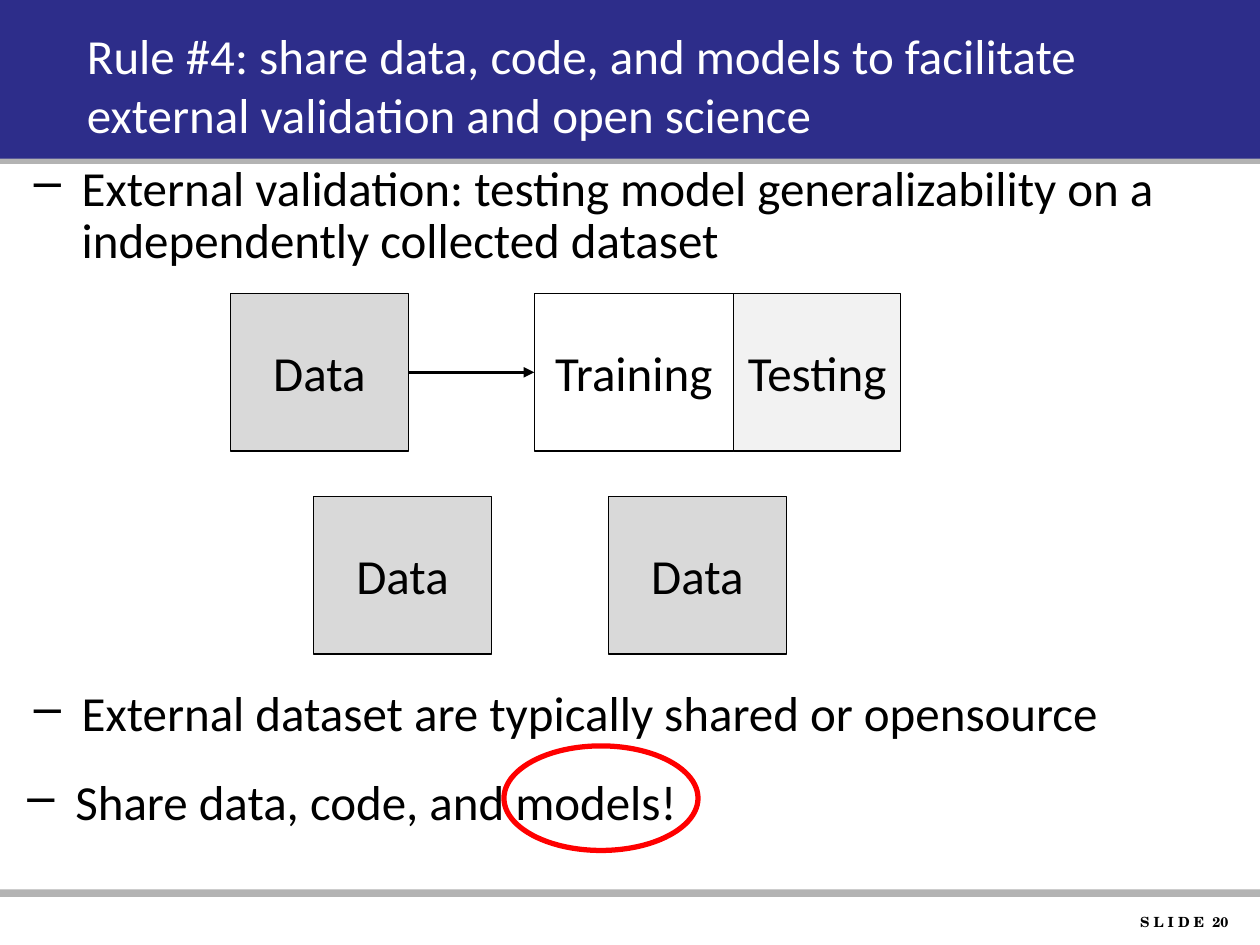
from lxml.etree import SubElement
from pptx import Presentation
from pptx.dml.color import RGBColor
from pptx.enum.shapes import MSO_CONNECTOR as Connector, MSO_SHAPE as Shape
from pptx.enum.text import MSO_ANCHOR as Anchor, PP_ALIGN as Align
from pptx.oxml.ns import qn
from pptx.util import Inches, Pt

COLORS = {
    "navy": "2D2D8A",
    "rule": "B3B3B3",
    "data": "D9D9D9",
    "testing": "F2F2F2",
    "white": "FFFFFF",
    "black": "000000",
    "highlight": "FF0000",
}
BOX_HEIGHT = 1.25
DATA_WIDTH = 1.41


def color(name):
    return RGBColor.from_string(COLORS[name])


def set_font(paragraph, size=28, name="Calibri", ink="black", bold=False):
    font = paragraph.font
    font.size, font.name, font.bold = Pt(size), name, bold
    font.color.rgb = color(ink)


def add_shape(slide, kind, left, top, width, height, fill=None, line=None, weight=0.75):
    shape = slide.shapes.add_shape(
        kind, Inches(left), Inches(top), Inches(width), Inches(height))
    shape.shadow.inherit = False
    if fill:
        shape.fill.solid()
        shape.fill.fore_color.rgb = color(fill)
    else:
        shape.fill.background()
    if line:
        shape.line.color.rgb = color(line)
        shape.line.width = Pt(weight)
    else:
        shape.line.fill.background()
    return shape


def add_box(slide, label, left, top, width=DATA_WIDTH, fill="data"):
    box = add_shape(slide, Shape.RECTANGLE, left, top, width, BOX_HEIGHT, fill, "black")
    frame = box.text_frame
    frame.word_wrap = False
    frame.vertical_anchor = Anchor.MIDDLE
    paragraph = frame.paragraphs[0]
    paragraph.text = label
    paragraph.alignment = Align.CENTER
    set_font(paragraph)


def add_text(slide, text, left, top, width, height):
    box = slide.shapes.add_textbox(
        Inches(left), Inches(top), Inches(width), Inches(height))
    box.text_frame.word_wrap = True
    paragraph = box.text_frame.paragraphs[0]
    paragraph.text = text
    return paragraph


def add_bullet(slide, text, left, top):
    paragraph = add_text(slide, text, left, top, 9.83, 1)
    paragraph.line_spacing = 0.9
    properties = paragraph._p.get_or_add_pPr()
    properties.set("marL", str(Inches(0.38)))
    properties.set("indent", str(-Inches(0.38)))
    SubElement(properties, qn("a:buChar")).set("char", "–")
    set_font(paragraph)


def add_arrow(slide, start, end, y):
    arrow = slide.shapes.add_connector(
        Connector.STRAIGHT, Inches(start), Inches(y), Inches(end), Inches(y))
    arrow.line.color.rgb = color("black")
    arrow.line.width = Pt(2)
    SubElement(arrow.line._get_or_add_ln(), qn("a:tailEnd")).set("type", "triangle")
    SubElement(arrow._element.spPr, qn("a:effectLst"))


def set_title(slide, text):
    title = slide.shapes.title
    title.left, title.top = Inches(0.59), Inches(0.17)
    title.width, title.height = Inches(8.9), Inches(1)
    title.text_frame.vertical_anchor = Anchor.MIDDLE
    paragraph = title.text_frame.paragraphs[0]
    paragraph.text = text
    paragraph.alignment = Align.LEFT
    set_font(paragraph, ink="white")
    # Bring the title in front of the banner
    slide.shapes._spTree.append(title._element)


def main():
    prs = Presentation()
    prs.slide_width, prs.slide_height = Inches(10), Inches(7.5)
    slide = prs.slides.add_slide(prs.slide_layouts[5])

    # Banner and footer
    add_shape(slide, Shape.RECTANGLE, 0, 1.05, 10, 0.25, "rule")
    add_shape(slide, Shape.RECTANGLE, 0, -0.01, 10, 1.27, "navy")
    add_shape(slide, Shape.RECTANGLE, 0, 7.06, 10, 0.06, "rule")
    number = add_text(slide, "S L I D E  20", 8.43, 7.2, 1.42, 0.23)
    number.alignment = Align.RIGHT
    set_font(number, 8, "TeX Gyre Schola", bold=True)
    set_title(slide, "Rule #4: share data, code, and models to facilitate "
                     "external validation and open science")

    # Statements
    add_bullet(slide, "External validation: testing model generalizability on a "
                      "independently collected dataset", 0.17, 1.25)
    add_bullet(slide, "External dataset are typically shared or opensource", 0.17, 5.42)
    add_bullet(slide, "Share data, code, and models!", 0.12, 6.13)

    # Data split into training and testing
    split_top, data_left, training_left, training_width = 2.33, 1.83, 4.24, 1.58
    add_box(slide, "Data", data_left, split_top)
    add_arrow(slide, data_left + DATA_WIDTH, training_left, split_top + BOX_HEIGHT / 2)
    add_box(slide, "Training", training_left, split_top, training_width, "white")
    add_box(slide, "Testing", training_left + training_width, split_top, 1.33, "testing")

    # Independent datasets
    for left in (2.49, 4.83):
        add_box(slide, "Data", left, 3.94)

    # Emphasis on models
    add_shape(slide, Shape.OVAL, 4, 5.92, 1.54, 0.83, line="highlight", weight=3)

    prs.save("out.pptx")


if __name__ == "__main__":
    main()
